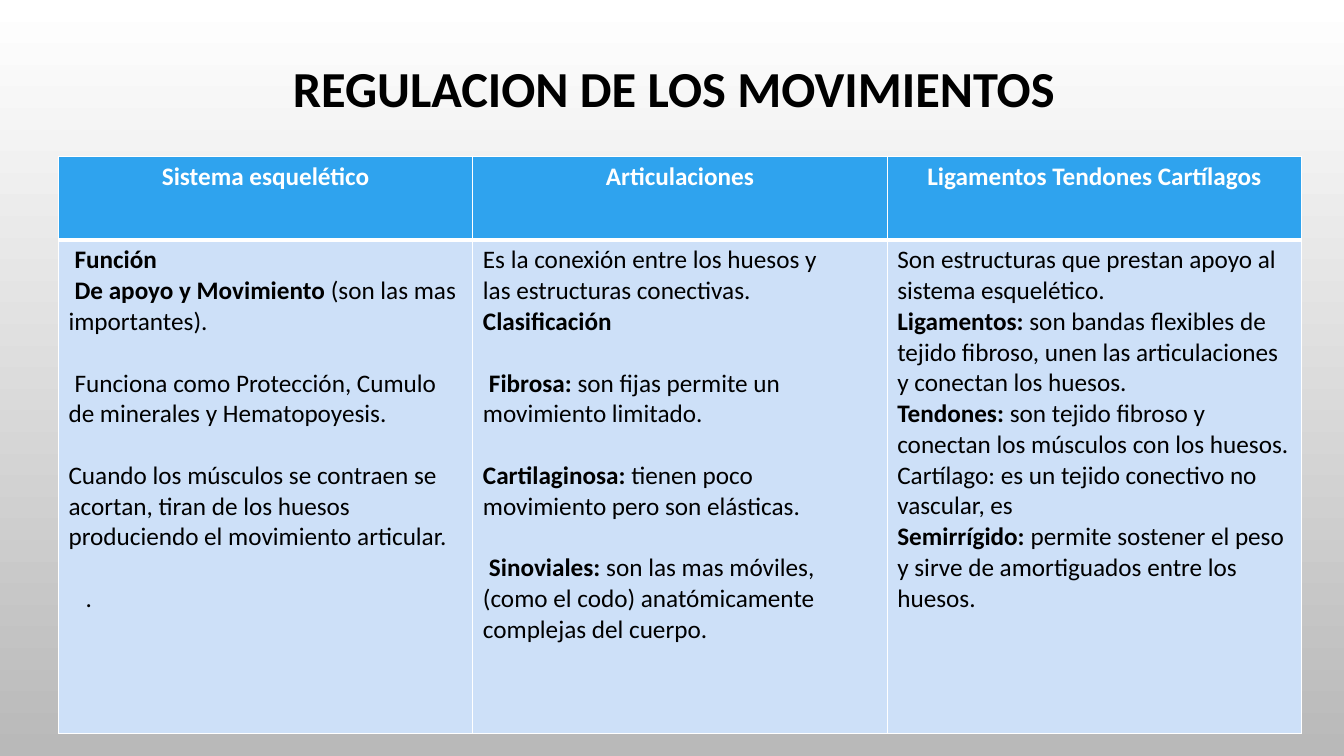
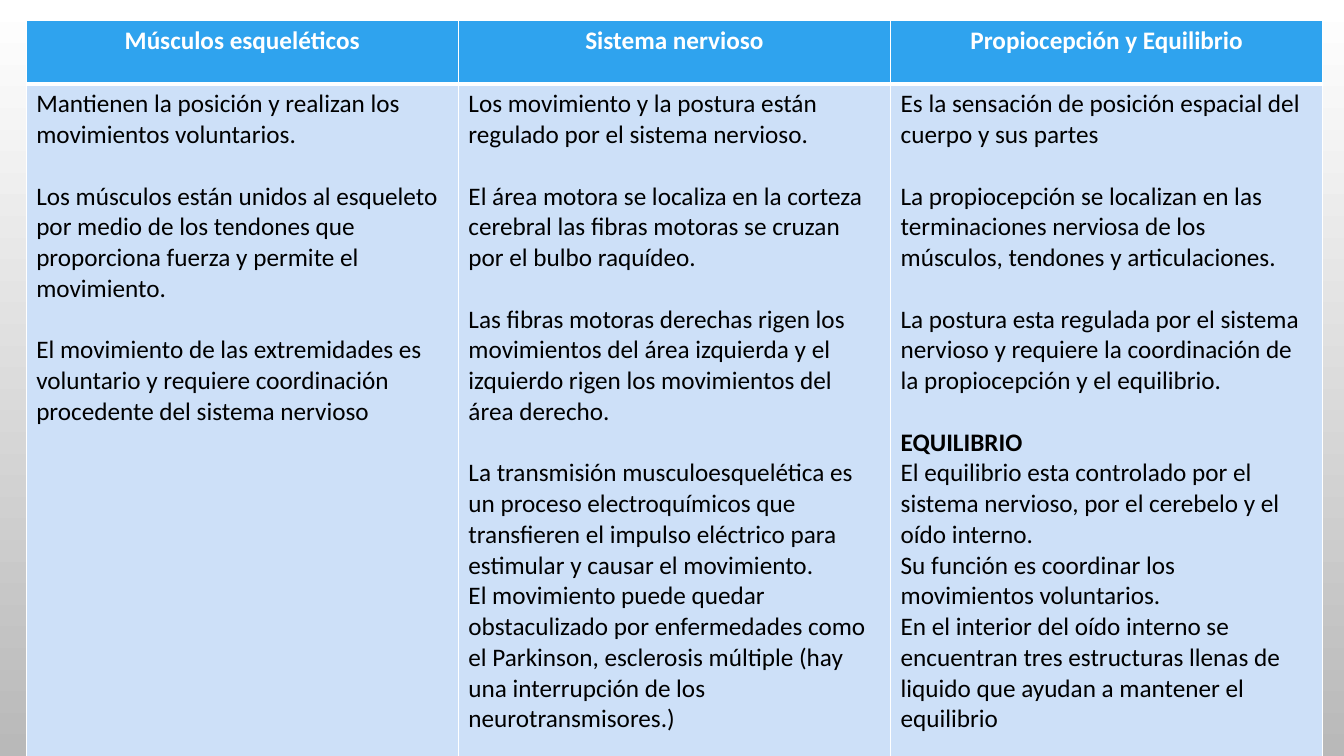
from typing import NamedTuple

from lxml import etree
from pptx import Presentation
from pptx.dml.color import RGBColor as Rgb
from pptx.enum.text import MSO_ANCHOR as Anchor, PP_ALIGN as Align
from pptx.oxml.ns import qn
from pptx.util import Inches, Pt


class Theme:
    font = "Calibri"
    title_size = Pt(36)
    text_size = Pt(18)
    blank_line = Pt(22)
    black = Rgb.from_string("000000")
    white = Rgb.from_string("FFFFFF")
    header_fill = Rgb.from_string("2FA3EE")
    body_fill = Rgb.from_string("CDE0F8")
    background = (Rgb.from_string("FFFFFF"), Rgb.from_string("B9B9B9"))
    thin_border = Pt(1)
    thick_border = Pt(3)


class Entry(NamedTuple):
    """A paragraph: bold lead, regular text, gap above, first-line indent in inches."""
    lead: str = ""
    text: str = ""
    gap: bool = False
    indent: float = 0


class TablePage(NamedTuple):
    title: str
    left: float
    top: float
    width: float
    row_heights: tuple
    columns: dict


PAGES = [
    TablePage("REGULACION DE LOS MOVIMIENTOS", 0.58, 1.55, 12.33, (0.83, 4.9), {
        "Sistema esquelético": [
            Entry("Función", indent=0.06),
            Entry("De apoyo y Movimiento ", "(son las mas importantes).", indent=0.06),
            Entry(text="Funciona como Protección, Cumulo de minerales y Hematopoyesis.",
                  gap=True, indent=0.06),
            Entry(text="Cuando los músculos se contraen se acortan, tiran de los huesos "
                       "produciendo el movimiento articular.", gap=True),
            Entry(text=".", gap=True, indent=0.17),
        ],
        "Articulaciones": [
            Entry(text="Es la conexión entre los huesos y"),
            Entry(text="las estructuras conectivas."),
            Entry("Clasificación"),
            Entry("Fibrosa: ", "son fijas permite un movimiento limitado.",
                  gap=True, indent=0.06),
            Entry("Cartilaginosa: ", "tienen poco movimiento pero son elásticas.", gap=True),
            Entry("Sinoviales: ", "son las mas móviles, (como el codo) anatómicamente "
                  "complejas del cuerpo.", gap=True, indent=0.06),
        ],
        "Ligamentos Tendones Cartílagos": [
            Entry(text="Son estructuras que prestan apoyo al sistema esquelético."),
            Entry("Ligamentos: ", "son bandas flexibles de tejido fibroso, unen las "
                  "articulaciones y conectan los huesos."),
            Entry("Tendones: ", "son tejido fibroso y conectan los músculos con los huesos."),
            Entry(text="Cartílago: es un tejido conectivo no vascular, es"),
            Entry("Semirrígido: ", "permite sostener el peso y sirve de amortiguados "
                  "entre los huesos."),
        ],
    }),
    TablePage("", 0.26, 0.2, 12.86, (0.63, 6.7), {
        "Músculos esqueléticos": [
            Entry(text="Mantienen la posición y realizan los movimientos voluntarios."),
            Entry(text="Los músculos están unidos al esqueleto por medio de los tendones "
                       "que proporciona fuerza y permite el movimiento.", gap=True),
            Entry(text="El movimiento de las extremidades es voluntario y requiere "
                       "coordinación procedente del sistema nervioso", gap=True),
        ],
        "Sistema nervioso": [
            Entry(text="Los movimiento y la postura están regulado por el sistema nervioso."),
            Entry(text="El área motora se localiza en la corteza cerebral las fibras "
                       "motoras se cruzan por el bulbo raquídeo.", gap=True),
            Entry(text="Las fibras motoras derechas rigen los movimientos del área "
                       "izquierda y el izquierdo rigen los movimientos del área derecho.",
                  gap=True),
            Entry(text="La transmisión musculoesquelética es un proceso electroquímicos "
                       "que transfieren el impulso eléctrico para estimular y causar el "
                       "movimiento.", gap=True),
            Entry(text="El movimiento puede quedar obstaculizado por enfermedades como el "
                       "Parkinson, esclerosis múltiple (hay una interrupción de los "
                       "neurotransmisores.)"),
        ],
        "Propiocepción y Equilibrio": [
            Entry(text="Es la sensación de posición espacial del cuerpo y sus partes"),
            Entry(text="La propiocepción se localizan en las terminaciones nerviosa de los "
                       "músculos, tendones y articulaciones.", gap=True),
            Entry(text="La postura esta regulada por el sistema nervioso y requiere la "
                       "coordinación de la propiocepción y el equilibrio.", gap=True),
            Entry("EQUILIBRIO", gap=True),
            Entry(text="El equilibrio esta controlado por el sistema nervioso, por el "
                       "cerebelo y el oído interno."),
            Entry(text="Su función es coordinar los movimientos voluntarios."),
            Entry(text="En el interior del oído interno se encuentran tres estructuras "
                       "llenas de liquido que ayudan a mantener el equilibrio"),
        ],
    }),
]


def add_run(paragraph, text, color, bold, size=Theme.text_size):
    run = paragraph.add_run()
    run.text = text
    run.font.name = Theme.font
    run.font.size = size
    run.font.bold = bold
    run.font.color.rgb = color


def style_cell(cell, fill_color, top_border, bottom_border):
    """Give the cell white borders and a solid fill."""
    properties = cell._tc.get_or_add_tcPr()
    borders = {"a:lnL": Theme.thin_border, "a:lnR": Theme.thin_border,
               "a:lnT": top_border, "a:lnB": bottom_border}
    for tag, width in borders.items():
        line = etree.SubElement(properties, qn(tag), w=str(width))
        line_fill = etree.SubElement(line, qn("a:solidFill"))
        etree.SubElement(line_fill, qn("a:srgbClr"), val=str(Theme.white))
    cell.fill.solid()
    cell.fill.fore_color.rgb = fill_color


presentation = Presentation()
presentation.slide_width = Inches(13.33)
presentation.slide_height = Inches(7.5)

background_fill = presentation.slide_master.background.fill
background_fill.gradient()
background_fill.gradient_angle = 270
for stop, color in zip(background_fill.gradient_stops, Theme.background):
    stop.color.rgb = color

title_layout = presentation.slide_layouts.get_by_name("Title Only")
blank_layout = presentation.slide_layouts.get_by_name("Blank")

for page in PAGES:
    slide = presentation.slides.add_slide(title_layout if page.title else blank_layout)
    if page.title:
        title = slide.shapes.title
        title.left, title.top = Inches(0.71), Inches(0.5)
        title.width, title.height = Inches(11.95), Inches(0.81)
        title.text_frame.vertical_anchor = Anchor.MIDDLE
        paragraph = title.text_frame.paragraphs[0]
        paragraph.alignment = Align.CENTER
        paragraph.line_spacing = 0.9
        add_run(paragraph, page.title, Theme.black, True, Theme.title_size)

    table = slide.shapes.add_table(
        len(page.row_heights), len(page.columns), Inches(page.left), Inches(page.top),
        Inches(page.width), Inches(sum(page.row_heights))).table
    for row, height in zip(table.rows, page.row_heights):
        row.height = Inches(height)

    for column, (heading, entries) in enumerate(page.columns.items()):
        header, body = table.cell(0, column), table.cell(1, column)
        style_cell(header, Theme.header_fill, Theme.thin_border, Theme.thick_border)
        style_cell(body, Theme.body_fill, Theme.thick_border, Theme.thin_border)

        paragraph = header.text_frame.paragraphs[0]
        paragraph.alignment = Align.CENTER
        add_run(paragraph, heading, Theme.white, True)

        for index, entry in enumerate(entries):
            frame = body.text_frame
            paragraph = frame.add_paragraph() if index else frame.paragraphs[0]
            if entry.gap:
                paragraph.space_before = Theme.blank_line
            if entry.indent:
                paragraph._p.get_or_add_pPr().set("indent", str(Inches(entry.indent)))
            for text, bold in ((entry.lead, True), (entry.text, False)):
                if text:
                    add_run(paragraph, text, Theme.black, bold)

presentation.save("out.pptx")
